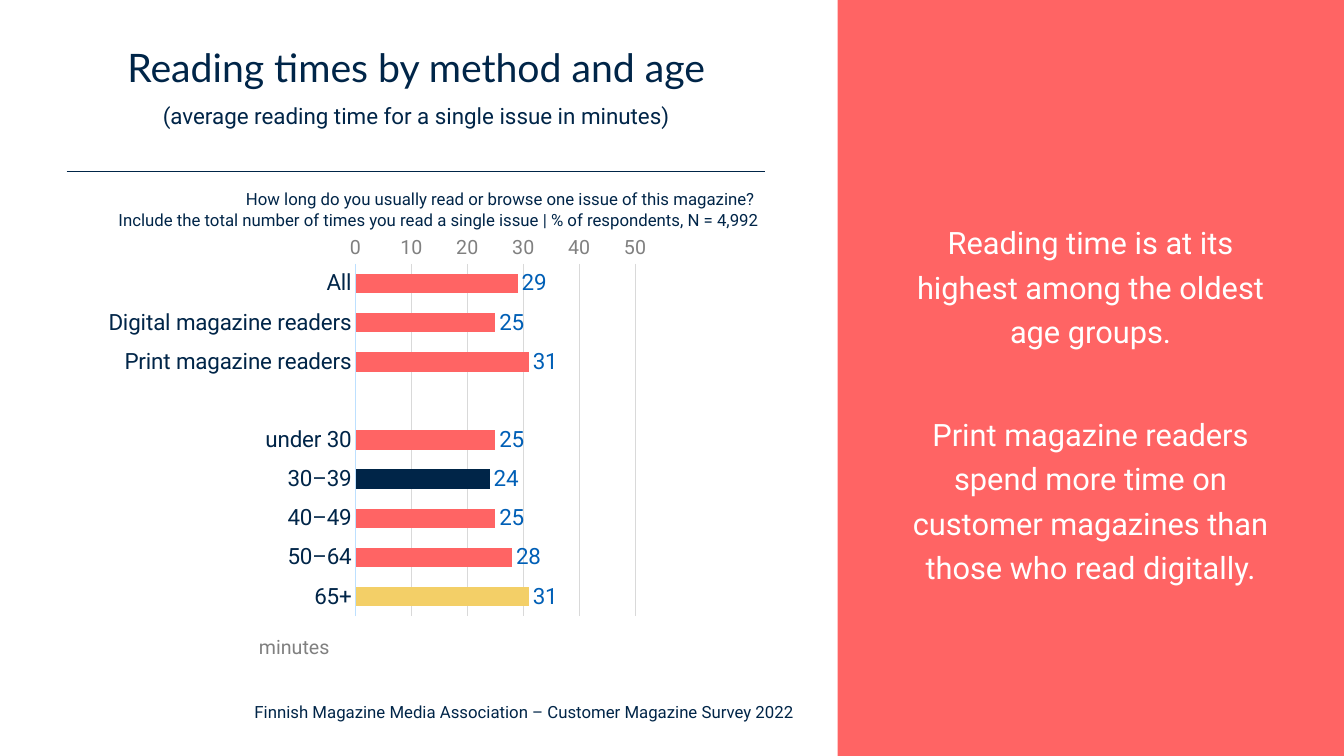
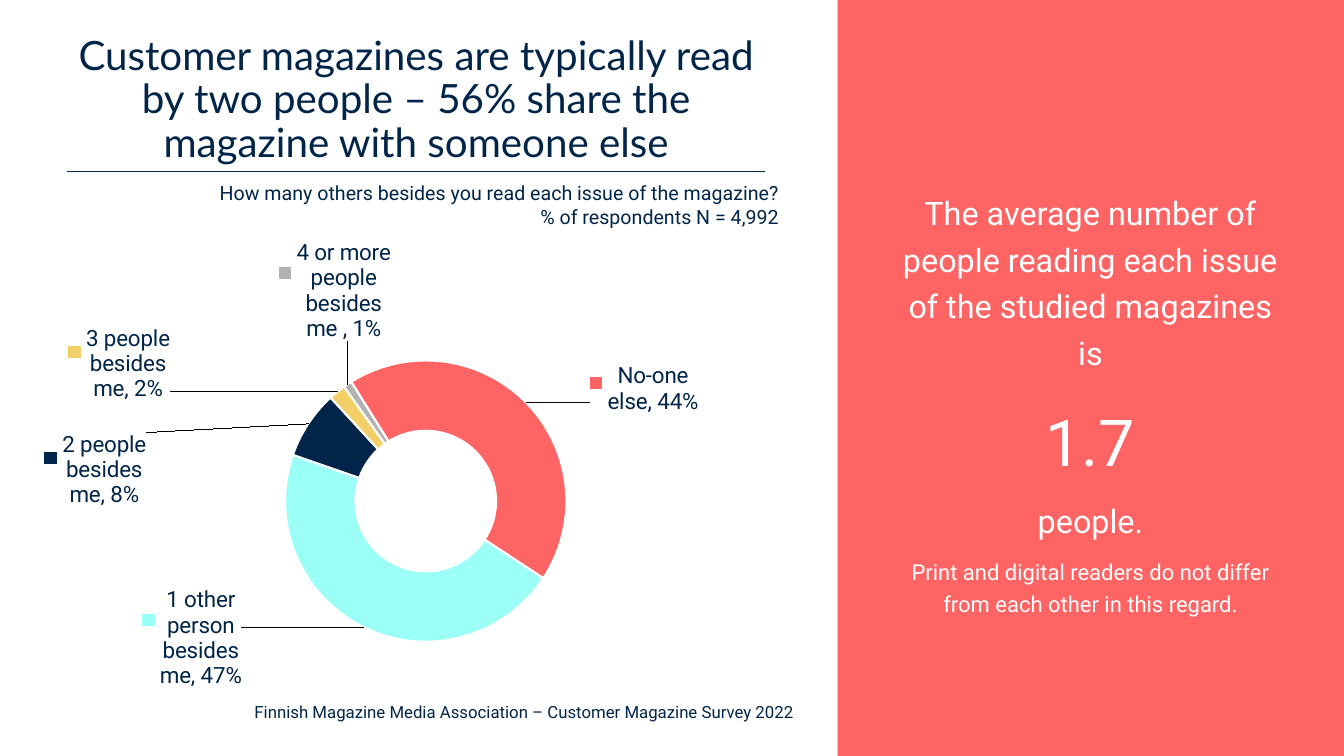
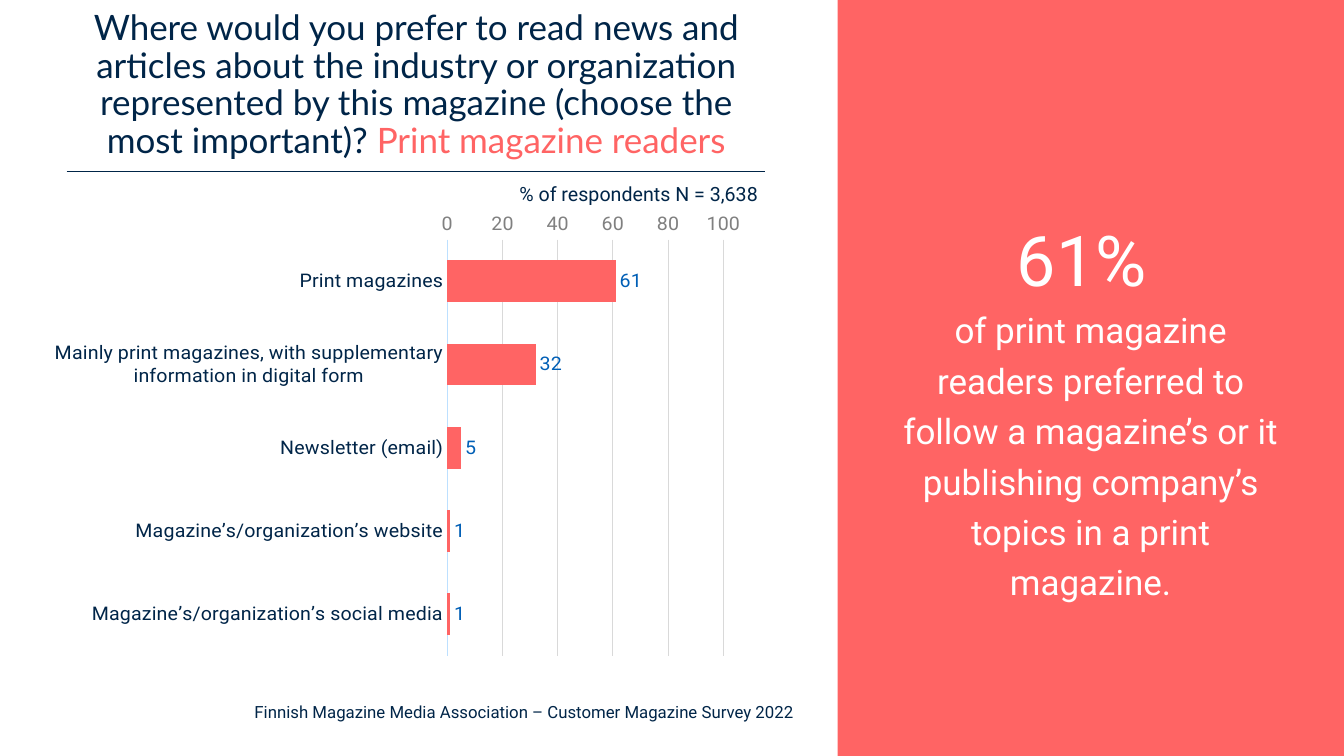
from copy import deepcopy
from math import cos, radians, sin

from pptx import Presentation
from pptx.chart.data import CategoryChartData
from pptx.dml.color import RGBColor
from pptx.enum.chart import XL_AXIS_CROSSES, XL_CHART_TYPE, XL_LABEL_POSITION, XL_TICK_MARK
from pptx.enum.shapes import MSO_CONNECTOR, MSO_SHAPE
from pptx.enum.text import MSO_ANCHOR, PP_ALIGN
from pptx.oxml import parse_xml
from pptx.oxml.ns import qn
from pptx.util import Pt

BAR, DOUGHNUT = XL_CHART_TYPE.BAR_CLUSTERED, XL_CHART_TYPE.DOUGHNUT
OUTSIDE_END = XL_LABEL_POSITION.OUTSIDE_END
NO_TICK = XL_TICK_MARK.NONE
AT_MAXIMUM = XL_AXIS_CROSSES.MAXIMUM
RECTANGLE, STRAIGHT = MSO_SHAPE.RECTANGLE, MSO_CONNECTOR.STRAIGHT
TOP, MIDDLE, BOTTOM = MSO_ANCHOR.TOP, MSO_ANCHOR.MIDDLE, MSO_ANCHOR.BOTTOM
CENTER, RIGHT = PP_ALIGN.CENTER, PP_ALIGN.RIGHT

COLORS = {
    "coral": "FF6464", "navy": "002548", "yellow": "F3CF67", "aqua": "9CFFF7",
    "silver": "B2B2B2", "gray": "808080", "grid": "D9D9D9", "axis": "BDE0FF",
    "value": "005FB6", "white": "FFFFFF",
}
CHART_NS = 'xmlns:c="http://schemas.openxmlformats.org/drawingml/2006/chart"'
DRAWING_NS = 'xmlns:a="http://schemas.openxmlformats.org/drawingml/2006/main"'

SLIDE_SIZE = (960, 540)
PANEL = (598.4, 0, 361.6, 540)
RULE = (47.6, 122.6, 546.8)
FOOTER_BOX = (151, 503, 447, 12)
FOOTER = "Finnish Magazine Media Association – Customer Magazine Survey 2022"
TAKEAWAY_BOX = (635, 122.6, 288, 328)

SLIDES = [
    {
        "title": [
            {"runs": [("Reading times by method and age", 28, "navy")]},
            {"runs": [("(average reading time for a single issue in minutes)", 16, "navy", "Roboto")],
             "before": 10},
        ],
        "title_box": (47.6, 4.2, 499.4, 118.4),
        "title_anchor": MIDDLE,
        "question": ["How long do you usually read or browse one issue of this magazine? ",
                     "Include the total number of times you read a single issue | "
                     "% of respondents, N = 4,992"],
        "question_box": (47.6, 131.6, 501.8, 36),
        "question_size": 12,
        "takeaway": [
            {"runs": [("Reading time is at its highest among the oldest age groups.", 22, "white")]},
            {"runs": [("Print magazine readers spend more time on customer magazines "
                       "than those who read digitally.", 22, "white")], "before": 42},
        ],
        "bars": {
            "box": (15.8, 168.5, 464.4, 305.3), "plot": (0.513, 0.065, 0.43, 0.825),
            "size": 16, "maximum": 50, "step": 10,
            "rows": [("All", 29), ("Digital magazine readers", 25), ("Print magazine readers", 31),
                     ("", None), ("under 30", 25), ("30–39", 24), ("40–49", 25),
                     ("50–64", 28), ("65+", 31)],
            "highlights": {5: "navy", 8: "yellow"},
        },
        "unit": ("minutes", (159, 450, 83.5, 24)),
    },
    {
        "title": [{"runs": [("Customer magazines are typically read by two people – 56% share "
                             "the magazine with someone else", 28.8, "navy")]}],
        "title_box": (47.6, 24.5, 499.4, 97.5),
        "title_anchor": BOTTOM,
        "question": ["How many others besides you read each issue of the magazine?",
                     "% of respondents N = 4,992"],
        "question_box": (47.6, 126, 516, 41),
        "question_size": 14,
        "takeaway": [
            {"runs": [("The average number of people reading each issue of the studied "
                       "magazines is", 23.1, "white")]},
            {"runs": [("1.7", 46.2, "white")], "before": 10},
            {"runs": [("people.", 23.1, "white")], "before": 10},
            {"runs": [("Print and digital readers do not differ from each other in this regard.",
                       15.7, "white")], "before": 10},
        ],
        "ring": {
            "box": (8, 172, 594.7, 328.3), "plot": (0.329, 0.26, 0.338, 0.613),
            "start": 328,
            "rows": [("No-one else", 44, "coral", (460, 278)),
                     ("1 other person besides me", 47, "aqua", (137, 456)),
                     ("2 people besides me", 8, "navy", (68, 336)),
                     ("3 people besides me", 2, "yellow", (85, 260)),
                     ("4 or more people besides me ", 1, "silver", (239, 208))],
        },
    },
    {
        "title": [{"runs": [("Where would you prefer to read news and articles about the industry "
                             "or organization represented by this magazine (choose the most "
                             "important)? ", 25, "navy"),
                            ("Print magazine readers", 25, "coral")]}],
        "title_box": (47.6, 0, 499.4, 122.4),
        "title_anchor": MIDDLE,
        "question": ["% of respondents N = 3,638"],
        "question_box": (247.6, 126.6, 301, 24.5),
        "question_size": 14,
        "takeaway": [
            {"runs": [("61% ", 50, "white")]},
            {"runs": [("of print magazine readers preferred to follow a magazine’s or it "
                       "publishing company’s topics in a print magazine.", 25, "white")]},
        ],
        "bars": {
            "box": (-12.3, 152, 558.7, 348.5), "plot": (0.594, 0.008, 0.353, 0.896),
            "size": 14, "maximum": 100, "step": 20,
            "rows": [("Print magazines", 61),
                     ("Mainly print magazines, with supplementary information in digital form", 32),
                     ("Newsletter (email)", 5),
                     ("Magazine’s/organization’s website", 1),
                     ("Magazine’s/organization’s social media", 1)],
            "highlights": {},
        },
    },
]


def rgb(name):
    return RGBColor.from_string(COLORS[name])


def points(lengths):
    return [Pt(length) for length in lengths]


def style_font(font, size, color, name="Roboto"):
    for key, value in {"size": Pt(size), "name": name, "bold": False}.items():
        setattr(font, key, value)
    font.color.rgb = rgb(color)


def paint(fill, color):
    fill.solid()
    fill.fore_color.rgb = rgb(color)


def stroke(line, color, width):
    line.color.rgb = rgb(color)
    line.width = Pt(width)


def add_text(slide, box, paragraphs, align=CENTER, anchor=TOP, spacing=1.0, face="Roboto"):
    frame = slide.shapes.add_textbox(*points(box)).text_frame
    frame.word_wrap = True
    frame.vertical_anchor = anchor
    for index, content in enumerate(paragraphs):
        paragraph = frame.paragraphs[0] if index == 0 else frame.add_paragraph()
        layout = {"alignment": align, "line_spacing": spacing,
                  "space_before": Pt(content.get("before", 0))}
        for key, value in layout.items():
            setattr(paragraph, key, value)
        for words, size, color, *own_face in content["runs"]:
            run = paragraph.add_run()
            run.text = words
            style_font(run.font, size, color, *(own_face or [face]))


def add_frame(slide):
    panel = slide.shapes.add_shape(RECTANGLE, *points(PANEL))
    panel.shadow.inherit = False
    paint(panel.fill, "coral")
    panel.line.fill.background()
    left, top, right = points(RULE)
    rule = slide.shapes.add_connector(STRAIGHT, left, top, right, top)
    stroke(rule.line, "navy", 1)
    rule._element.spPr.append(parse_xml(f"<a:effectLst {DRAWING_NS}/>"))
    add_text(slide, FOOTER_BOX, [{"runs": [(FOOTER, 12, "navy")]}], anchor=MIDDLE, spacing=0.9)


def manual_layout(values, inner=False):
    target = '<c:layoutTarget val="inner"/>' if inner else ""
    modes = '<c:xMode val="edge"/><c:yMode val="edge"/>' if inner else ""
    places = "".join(f'<c:{key} val="{value:.4f}"/>' for key, value in zip("xywh", values))
    return parse_xml(f"<c:layout {CHART_NS}><c:manualLayout>{target}{modes}{places}"
                     "</c:manualLayout></c:layout>")


def add_chart(slide, kind, content):
    data = CategoryChartData()
    data.categories = [row[0] for row in content["rows"]]
    data.add_series("Series 1", [row[1] for row in content["rows"]])
    chart = slide.shapes.add_chart(kind, *points(content["box"]), data).chart
    chart.has_legend = chart.has_title = False
    style_font(chart.font, 10, "navy", "Calibri")
    plot_area = chart._chartSpace.chart.plotArea
    for old in plot_area.findall(qn("c:layout")):
        plot_area.remove(old)
    plot_area.insert(0, manual_layout(content["plot"], inner=True))
    return chart


def add_bars(slide, content):
    chart = add_chart(slide, BAR, content)
    plot = chart.plots[0]
    plot.gap_width = 100
    plot.vary_by_categories = False
    series = plot.series[0]
    paint(series.format.fill, "coral")
    for index, color in content["highlights"].items():
        paint(series.points[index].format.fill, color)
    labels = series.data_labels
    for key, value in {"show_value": True, "position": OUTSIDE_END, "number_format": "#,##0",
                       "number_format_is_linked": False}.items():
        setattr(labels, key, value)
    style_font(labels.font, content["size"], "value")

    names, scale = chart.category_axis, chart.value_axis
    for axis in (names, scale):
        axis.major_tick_mark = axis.minor_tick_mark = NO_TICK
    names.reverse_order = True
    names.crosses = AT_MAXIMUM
    stroke(names.format.line, "axis", 0.75)
    style_font(names.tick_labels.font, content["size"], "navy")
    for key, value in {"minimum_scale": 0, "maximum_scale": content["maximum"],
                       "major_unit": content["step"], "has_major_gridlines": True}.items():
        setattr(scale, key, value)
    scale.format.line.fill.background()
    stroke(scale.major_gridlines.format.line, "grid", 0.75)
    style_font(scale.tick_labels.font, 14, "gray")


def label_offsets(content):
    left, top, width, height = content["box"]
    x, y, w, h = content["plot"]
    center_x, center_y = left + (x + w / 2) * width, top + (y + h / 2) * height
    ring_radius = 0.375 * min(w * width, h * height)
    total = sum(row[1] for row in content["rows"])
    angle = content["start"]
    for _, value, _, (label_x, label_y) in content["rows"]:
        sweep = 360 * value / total
        middle = radians(angle + sweep / 2)
        yield ((label_x - center_x - ring_radius * sin(middle)) / width,
               (label_y - center_y + ring_radius * cos(middle)) / height)
        angle += sweep


def add_ring(slide, content):
    chart = add_chart(slide, DOUGHNUT, content)
    plot = chart.plots[0]
    plot.vary_by_categories = True
    ring = plot._element
    ring.find(qn("c:firstSliceAng")).set("val", str(content["start"]))
    ring.find(qn("c:holeSize")).set("val", "70")
    series = plot.series[0]
    for index, (_, _, color, _) in enumerate(content["rows"]):
        segment = series.points[index].format
        paint(segment.fill, color)
        stroke(segment.line, "white", 1.5)

    labels = series.data_labels
    for key, value in {"show_value": True, "show_category_name": True, "show_legend_key": True,
                       "number_format": '0"%"', "number_format_is_linked": False}.items():
        setattr(labels, key, value)
    style_font(labels.font, 16, "navy")
    group = labels._element
    leader = group.find(qn("c:showLeaderLines"))
    if leader is None:
        leader = parse_xml(f'<c:showLeaderLines {CHART_NS} val="1"/>')
        group.append(leader)
    leader.set("val", "1")
    leader.addprevious(parse_xml(f"<c:separator {CHART_NS}>, </c:separator>"))
    shared = [part for part in group if part is not leader]
    for index, offset in enumerate(label_offsets(content)):
        label = parse_xml(f'<c:dLbl {CHART_NS}><c:idx val="{index}"/></c:dLbl>')
        label.append(manual_layout(offset))
        for part in shared:
            label.append(deepcopy(part))
        group.insert(index, label)


def main():
    deck = Presentation()
    deck.slide_width, deck.slide_height = points(SLIDE_SIZE)
    blank = deck.slide_layouts[6]
    for content in SLIDES:
        slide = deck.slides.add_slide(blank)
        add_frame(slide)
        add_text(slide, content["title_box"], content["title"],
                 anchor=content["title_anchor"], spacing=0.9, face="Lato")
        add_text(slide, TAKEAWAY_BOX, content["takeaway"], anchor=MIDDLE, spacing=1.2)
        question = [{"runs": [(line, content["question_size"], "navy")]}
                    for line in content["question"]]
        add_text(slide, content["question_box"], question, align=RIGHT)
        if "bars" in content:
            add_bars(slide, content["bars"])
        if "ring" in content:
            add_ring(slide, content["ring"])
        if "unit" in content:
            unit, box = content["unit"]
            add_text(slide, box, [{"runs": [(unit, 14, "gray")]}], align=RIGHT)
    deck.save("out.pptx")


if __name__ == "__main__":
    main()
